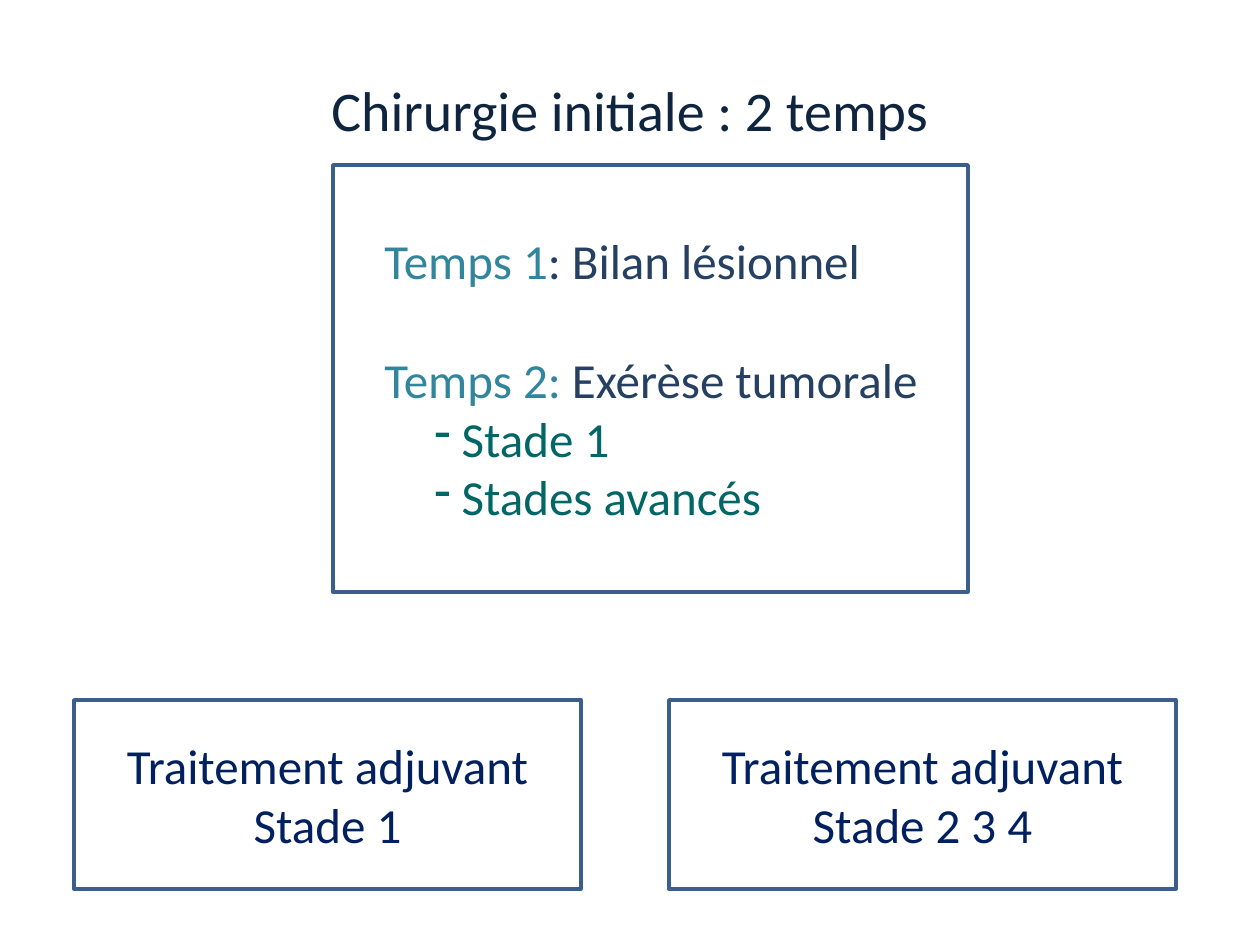
from lxml import etree
from pptx import Presentation
from pptx import util as u
from pptx.dml.color import RGBColor
from pptx.enum import shapes, text
from pptx.oxml.ns import qn

PX = 914400 / 126
FONT = "Calibri"
WHITE, BORDER = "FFFFFF", "3A5F8C"
TEAL, NAVY, GREEN = "31859C", "254061", "006666"
TITLE_COLOR, TREATMENT_COLOR = "0F243E", "002060"


def px(length):
    return u.Emu(round(length * PX))


def color(value):
    return RGBColor.from_string(value)


def add_rect(page, left, top, width, height, fill=None, line=None):
    box = page.shapes.add_shape(
        shapes.MSO_SHAPE.RECTANGLE, px(left), px(top), px(width), px(height))
    box.shadow.inherit = False
    if fill:
        box.fill.solid()
        box.fill.fore_color.rgb = color(fill)
    else:
        box.fill.background()
    if line:
        box.line.color.rgb = color(line)
        box.line.width = u.Pt(2)
    else:
        box.line.fill.background()
    return box


def set_opacity(box, percent):
    fill_color = box._element.spPr.find(qn("a:solidFill"))[0]
    etree.SubElement(fill_color, qn("a:alpha"), val=str(percent * 1000))


def fit_to_text(frame):
    frame.word_wrap = False
    frame.auto_size = text.MSO_AUTO_SIZE.SHAPE_TO_FIT_TEXT
    frame.vertical_anchor = text.MSO_ANCHOR.TOP


def write_para(para, spans, size=28, align=text.PP_ALIGN.LEFT):
    """Fill a paragraph with (words, colour) spans."""
    para.alignment = align
    para.font.name = FONT
    para.font.size = u.Pt(size)
    for words, span_color in spans:
        span = para.add_run()
        span.text = words
        span.font.color.rgb = color(span_color)


def add_dash(para):
    props = para._p.get_or_add_pPr()
    props.set("marL", str(px(39)))
    props.set("indent", str(px(11)))
    etree.SubElement(props, qn("a:buChar"), char="-")
    # The bullet must come before the default run properties.
    defaults = props.find(qn("a:defRPr"))
    if defaults is not None:
        props.append(defaults)


def add_title(page, words):
    box = page.shapes.add_textbox(px(319), px(69), px(630), px(81))
    fit_to_text(box.text_frame)
    write_para(box.text_frame.paragraphs[0], [(words, TITLE_COLOR)], size=32)


def add_steps(page):
    box = add_rect(page, 372, 165, 576, 369, fill=WHITE)
    set_opacity(box, 46)
    frame = box.text_frame
    fit_to_text(frame)
    frame.margin_top = px(66)
    write_para(frame.paragraphs[0],
               [("Temps 1", TEAL), (": Bilan lésionnel", NAVY)])
    second = frame.add_paragraph()
    second.space_before = u.Pt(34)
    write_para(second, [("Temps 2: ", TEAL), ("Exérèse tumorale", NAVY)])
    for stage in (" Stade 1", " Stades avancés"):
        para = frame.add_paragraph()
        write_para(para, [(stage, GREEN)])
        add_dash(para)


def add_treatment(page, left, stage):
    box = add_rect(page, left, 700, 507, 189, fill=WHITE, line=BORDER)
    frame = box.text_frame
    frame.word_wrap = True
    frame.vertical_anchor = text.MSO_ANCHOR.MIDDLE
    for para, words in ((frame.paragraphs[0], "Traitement adjuvant"),
                        (frame.add_paragraph(), stage)):
        write_para(para, [(words, TREATMENT_COLOR)],
                   align=text.PP_ALIGN.CENTER)


def main():
    deck = Presentation()
    deck.slide_width, deck.slide_height = u.Inches(10), u.Inches(7.5)
    page = deck.slides.add_slide(deck.slide_layouts[6])
    add_steps(page)
    add_title(page, "Chirurgie initiale : 2 temps")
    add_rect(page, 333, 165, 635, 427, line=BORDER)
    add_treatment(page, 74, "Stade 1")
    add_treatment(page, 669, "Stade 2 3 4")
    deck.save("out.pptx")


if __name__ == "__main__":
    main()
